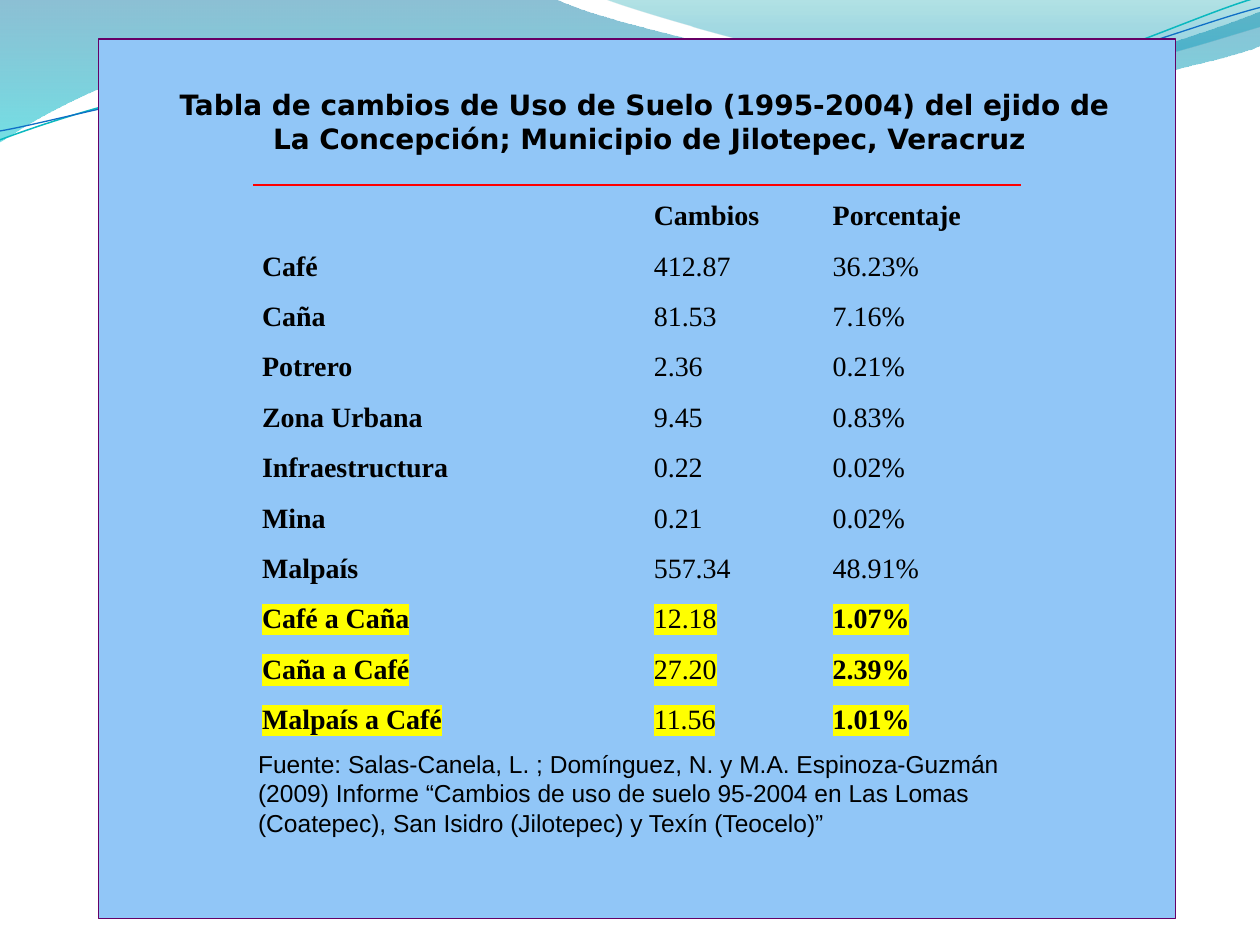
from dataclasses import dataclass
from math import cos, radians, sin

from lxml import etree
from pptx import Presentation
from pptx.dml.color import RGBColor
from pptx.enum.shapes import MSO_SHAPE
from pptx.enum.text import MSO_ANCHOR, PP_ALIGN
from pptx.oxml.ns import qn
from pptx.util import Inches, Pt

RECTANGLE = MSO_SHAPE.RECTANGLE
MIDDLE = MSO_ANCHOR.MIDDLE
LEFT, CENTER = PP_ALIGN.LEFT, PP_ALIGN.CENTER
UNIT = Inches(1)
GRID_COLS, GRID_ROWS = 10, 7.5
TILT = 2.7
NO_GRID_STYLE = "{2D5ABB26-0587-4C30-8999-92F81FD0307C}"


@dataclass(frozen=True)
class Theme:
    """Colours, fonts and sizes of the slide."""
    ink: str = "000000"
    panel: str = "91C6F7"
    panel_line: str = "660066"
    rule: str = "FF0000"
    mark: str = "FFFF00"
    title: tuple = ("DejaVu Sans", 16)
    table: tuple = ("Times New Roman", 16)
    source: tuple = ("Arial", 14)


@dataclass(frozen=True)
class Box:
    """A region in grid columns and rows."""
    x: float
    y: float
    w: float
    h: float

    def emu(self):
        """Return the region in slide lengths."""
        return [round(v * UNIT) for v in (self.x, self.y, self.w, self.h)]


THEME = Theme()

BANDS = [
    ([(0, -0.01), (4.4, -0.01),
      (4.76, 0.17, 6.64, 0.63, 7.58, 0.63), (8.53, 0.63, 9.58, 0.26, 10, 0.09),
      (10.01, 0.36),
      (9.83, 0.44, 8.7, 0.76, 7.46, 0.75), (6.22, 0.75, 3.82, 0.28, 2.57, 0.34),
      (1.29, 0.35, 0.46, 0.83, -0.01, 1.13), (0, -0.01)],
     [(0, "0074A1", 45), (1, "00C6CF", 55)]),
    ([(4.79, -0.01),
      (5.09, 0.11, 6.82, 0.62, 7.69, 0.65), (8.56, 0.69, 9.61, 0.32, 10, 0.21),
      (10, 0), (4.79, -0.01)],
     [(0, "00A1A9", 30), (0.8, "008BBF", 45)]),
]
STRANDS = [
    ([(0, 1.11), (0.48, 0.93, 1.58, 0.57, 2.77, 0.52),
      (3.95, 0.47, 5.93, 0.89, 7.13, 0.8), (8.33, 0.71, 9.38, 0.15, 9.98, -0.02)],
     "0AB8BF", 0.85, (4.99, 0.575)),
    ([(0, 1.04), (0.47, 0.96, 1.64, 0.61, 2.83, 0.56),
      (4.03, 0.51, 5.97, 0.83, 7.17, 0.75), (8.36, 0.67, 9.41, 0.21, 10, 0.06)],
     "0F6FC6", 0.75, (5, 0.59)),
]

TITLE = ["Tabla de cambios de Uso de Suelo (1995-2004) del ejido de ",
         "La Concepción; Municipio de Jilotepec, Veracruz"]
SOURCE = ["Fuente: Salas-Canela, L. ; Domínguez, N. y M.A. Espinoza-Guzmán (2009) "
          "Informe “Cambios de uso de suelo 95-2004 en Las Lomas (Coatepec), "
          "San Isidro (Jilotepec) y Texín (Teocelo)”"]
COLUMN_WEIGHTS = (3.11, 1.42, 1.56)
ROWS = [
    ("", "Cambios", "Porcentaje"),
    ("Café", "412.87", "36.23%"),
    ("Caña", "81.53", "7.16%"),
    ("Potrero", "2.36", "0.21%"),
    ("Zona Urbana", "9.45", "0.83%"),
    ("Infraestructura", "0.22", "0.02%"),
    ("Mina", "0.21", "0.02%"),
    ("Malpaís", "557.34", "48.91%"),
    ("Café a Caña", "12.18", "1.07%"),
    ("Caña a Café", "27.20", "2.39%"),
    ("Malpaís a Café", "11.56", "1.01%"),
]
FIRST_CHANGE = 8


def rgb(value):
    """Turn a hex string into a colour."""
    return RGBColor.from_string(value)


def style_run(r, face, bold=False):
    """Apply a theme face and the ink colour to a run."""
    r.font.name, r.font.size = face[0], Pt(face[1])
    r.font.bold = bold
    r.font.color.rgb = rgb(THEME.ink)


def color_child(parent, tag, value):
    """Create a colour holder element such as a highlight."""
    holder = etree.SubElement(parent, qn(tag))
    etree.SubElement(holder, qn("a:srgbClr"), val=value)
    return holder


def turn(point, center, degrees):
    """Rotate a point clockwise about a center."""
    a = radians(degrees)
    dx, dy = point[0] - center[0], point[1] - center[1]
    return (center[0] + dx * cos(a) - dy * sin(a),
            center[1] + dx * sin(a) + dy * cos(a))


def add_outline(shapes, box, steps, close, center=(0, 0), tilt=0):
    """Draw an outline of points and cubic curves relative to the box."""
    points = [turn(step[i:i + 2], center, tilt)
              for step in steps for i in range(0, len(step), 2)]
    points = [((box.x + x) * UNIT, (box.y + y) * UNIT) for x, y in points]
    builder = shapes.build_freeform(*points[0], scale=1.0)
    builder.add_line_segments(points[1:], close=close)
    sp = builder.convert_to_shape()
    sp.shadow.inherit = False
    sp.rotation = -tilt % 360
    segments = iter(list(sp.element.iter(qn("a:lnTo"))))
    for step in steps[1:]:
        first, *rest = [next(segments) for _ in range(len(step) // 2)]
        if rest:
            curve = etree.Element(qn("a:cubicBezTo"))
            first.addprevious(curve)
            for segment in (first, *rest):
                curve.append(segment[0])
                segment.getparent().remove(segment)
    return sp


def add_waves(s, box):
    """Draw the shaded bands and thin strands along the top."""
    for steps, stops in BANDS:
        sp = add_outline(s.shapes, box, steps, True)
        sp.line.fill.background()
        sp.fill.gradient()
        sp.fill.gradient_angle = 270
        for stop, (position, color, _) in zip(sp.fill.gradient_stops, stops):
            stop.position, stop.color.rgb = position, rgb(color)
        for node, (_, _, opacity) in zip(sp.element.spPr.iter(qn("a:srgbClr")), stops):
            etree.SubElement(node, qn("a:alpha"), val=str(opacity * 1000))
    group = s.shapes.add_group_shape()
    for steps, color, width, center in STRANDS:
        sp = add_outline(group.shapes, box, steps, False, center, TILT)
        sp.fill.background()
        sp.line.color.rgb, sp.line.width = rgb(color), Pt(width)


def add_panel(s, box):
    """Draw the blue panel behind the content."""
    sp = s.shapes.add_shape(RECTANGLE, *box.emu())
    sp.shadow.inherit = False
    sp.fill.solid()
    sp.fill.fore_color.rgb = rgb(THEME.panel)
    sp.line.color.rgb, sp.line.width = rgb(THEME.panel_line), Pt(0.75)


def add_text(s, box, lines, face, bold=False, align=LEFT, bottom=0.05):
    """Place lines of text centred vertically in the box."""
    tf = s.shapes.add_textbox(*box.emu()).text_frame
    tf.word_wrap, tf.vertical_anchor = True, MIDDLE
    tf.margin_bottom = Inches(bottom)
    tf.text = "\n".join(lines)
    for p in tf.paragraphs:
        p.alignment = align
        style_run(p.runs[0], face, bold)


def fill_cell(cell, text, bold, marked, ruled):
    """Write one table cell with its highlight and top rule."""
    cell.margin_left = cell.margin_right = Inches(0.07)
    cell.margin_top = cell.margin_bottom = 0
    cell.fill.background()
    if text:
        p = cell.text_frame.paragraphs[0]
        p.text, p.line_spacing = text, 1.5
        r = p.runs[0]
        style_run(r, THEME.table, bold)
        if marked:
            rPr = r.font._element
            rPr.find(qn("a:solidFill")).addnext(color_child(rPr, "a:highlight", THEME.mark))
    if ruled:
        tcPr = cell._tc.get_or_add_tcPr()
        line = etree.Element(qn("a:lnT"), w=str(Pt(1)))
        color_child(line, "a:solidFill", THEME.rule)
        tcPr.insert(0, line)


def add_land_table(s, box):
    """Place the land use table in the box."""
    table = s.shapes.add_table(len(ROWS), len(COLUMN_WEIGHTS), *box.emu()).table
    table.first_row = table.horz_banding = False
    table._tbl.tblPr.find(qn("a:tableStyleId")).text = NO_GRID_STYLE
    for column, weight in zip(table.columns, COLUMN_WEIGHTS):
        column.width = round(box.w * UNIT * weight / sum(COLUMN_WEIGHTS))
    for i, values in enumerate(ROWS):
        table.rows[i].height = round(box.h * UNIT / len(ROWS))
        marked = i >= FIRST_CHANGE
        for j, text in enumerate(values):
            bold = i == 0 or j == 0 or (marked and j == 2)
            fill_cell(table.cell(i, j), text, bold, marked, i == 0)


def main():
    """Build and save the slide."""
    prs = Presentation()
    prs.slide_width, prs.slide_height = GRID_COLS * UNIT, round(GRID_ROWS * UNIT)
    s = prs.slides.add_slide(prs.slide_layouts[6])
    add_waves(s, Box(0, 0, GRID_COLS, 1.14))
    add_panel(s, Box(0.78, 0.31, 8.55, 6.98))
    add_land_table(s, Box(2.01, 1.47, 6.09, 4.4))
    add_text(s, Box(1.18, 0.38, 7.95, 1.21), TITLE, THEME.title, True, CENTER, 0.09)
    add_text(s, Box(1.95, 5.89, 6.48, 0.81), SOURCE, THEME.source)
    prs.save("out.pptx")


if __name__ == "__main__":
    main()
